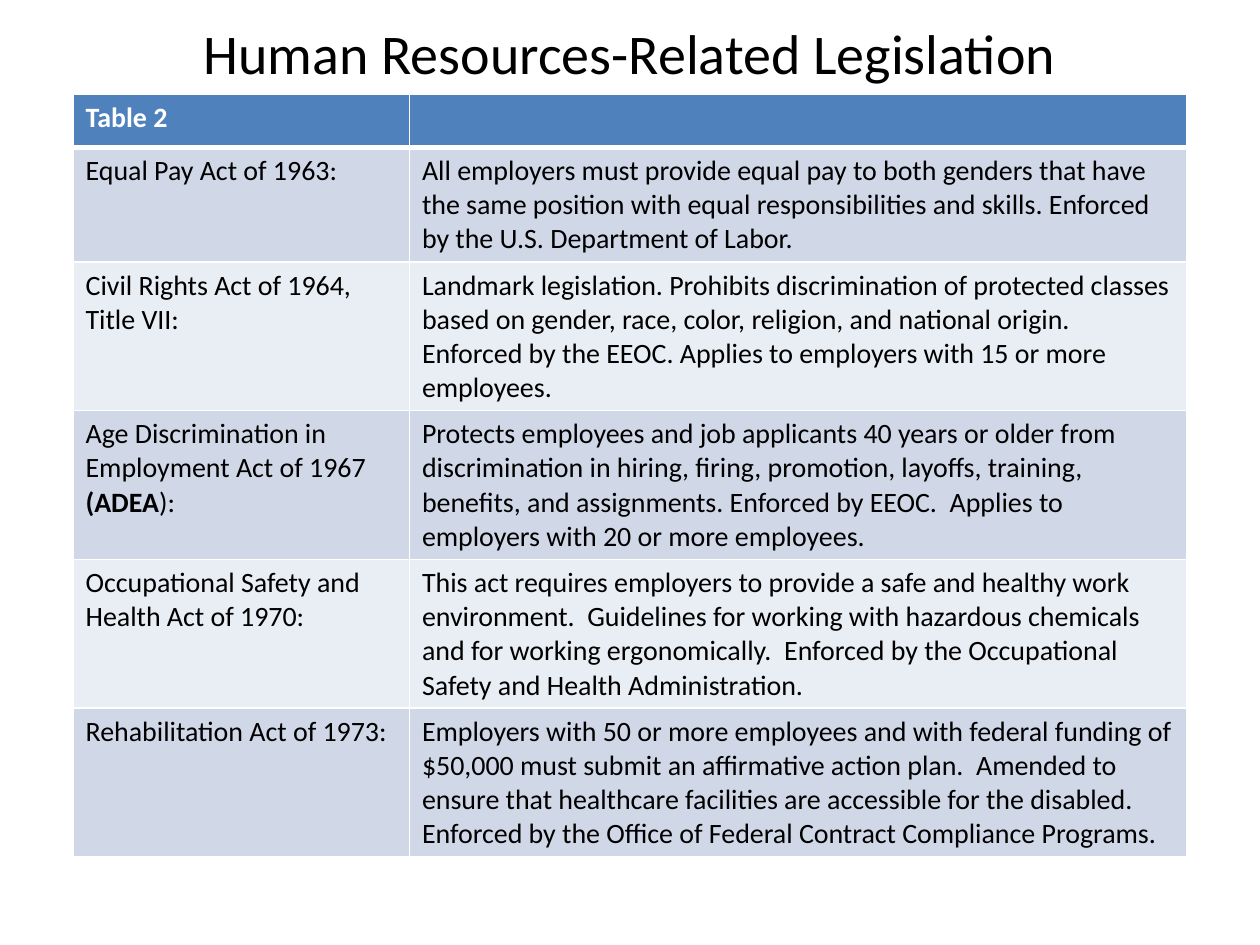
from typing import NamedTuple

from lxml.etree import SubElement
from pptx import Presentation
from pptx.dml.color import RGBColor
from pptx.enum.text import MSO_ANCHOR, PP_ALIGN
from pptx.oxml.ns import qn
from pptx.util import Inches, Pt

FONT = "Calibri"
COLORS = {
    "text": "000000",
    "white": "FFFFFF",
    "header": "4F81BD",
    "band_dark": "D0D8E8",
    "band_light": "E9EDF4",
}


class Run(NamedTuple):
    text: str
    bold: bool = False


class Act(NamedTuple):
    name: list[Run]
    summary: str
    height: float


ACTS = [
    Act([Run("Equal Pay Act of 1963:")],
        "All employers must provide equal pay to both genders that have the same "
        "position with equal responsibilities and skills. Enforced by the U.S. "
        "Department of Labor.", 0.91),
    Act([Run("Civil Rights Act of 1964, Title VII:")],
        "Landmark legislation. Prohibits discrimination of protected classes based "
        "on gender, race, color, religion, and national origin. Enforced by the "
        "EEOC. Applies to employers with 15 or more employees.", 1.18),
    Act([Run("Age Discrimination in Employment Act of 1967 "), Run("(ADEA", True),
         Run("):")],
        "Protects employees and job applicants 40 years or older from discrimination "
        "in hiring, firing, promotion, layoffs, training, benefits, and assignments. "
        "Enforced by EEOC.  Applies to employers with 20 or more employees.", 1.18),
    Act([Run("Occupational Safety and Health Act of 1970:")],
        "This act requires employers to provide a safe and healthy work environment.  "
        "Guidelines for working with hazardous chemicals and for working "
        "ergonomically.  Enforced by the Occupational Safety and Health "
        "Administration.", 1.18),
    Act([Run("Rehabilitation Act of 1973:")],
        "Employers with 50 or more employees and with federal funding of $50,000 must "
        "submit an affirmative action plan.  Amended to ensure that healthcare "
        "facilities are accessible for the disabled.  Enforced by the Office of "
        "Federal Contract Compliance Programs.", 1.18),
]
HEADER_HEIGHT = 0.42
COLUMN_WIDTHS = [2.67, 6.17]


def add_runs(p, runs: list[Run], size: int, color: str) -> None:
    p.font.size = Pt(size)
    p.font.name = FONT
    for run in runs:
        r = p.add_run()
        r.text = run.text
        r.font.name = FONT
        r.font.size = Pt(size)
        r.font.bold = run.bold
        r.font.color.rgb = RGBColor.from_string(COLORS[color])


def set_borders(cell, bottom: float, top: float) -> None:
    """Give the cell white borders, one point wide at the sides."""
    tc_pr = cell._tc.get_or_add_tcPr()
    widths = {"a:lnL": 1, "a:lnR": 1, "a:lnT": top, "a:lnB": bottom}
    for i, (tag, width) in enumerate(widths.items()):
        ln = SubElement(tc_pr, qn(tag), w=str(Pt(width)))
        fill = SubElement(ln, qn("a:solidFill"))
        SubElement(fill, qn("a:srgbClr"), val=COLORS["white"])
        tc_pr.insert(i, ln)  # borders come before the fill


def fill_cell(cell, runs: list[Run], fill: str, color: str = "text",
              bottom: float = 1, top: float = 1) -> None:
    cell.fill.solid()
    cell.fill.fore_color.rgb = RGBColor.from_string(COLORS[fill])
    set_borders(cell, bottom, top)
    add_runs(cell.text_frame.paragraphs[0], runs, 16, color)


def add_title(s, text: str) -> None:
    sp = s.shapes.add_textbox(Inches(0.5), Inches(0.08), Inches(9), Inches(0.67))
    tf = sp.text_frame
    tf.word_wrap = True
    tf.vertical_anchor = MSO_ANCHOR.MIDDLE
    p = tf.paragraphs[0]
    p.alignment = PP_ALIGN.CENTER
    add_runs(p, [Run(text)], 32, "text")


def add_acts_table(s, acts: list[Act]) -> None:
    heights = [HEADER_HEIGHT] + [act.height for act in acts]
    table = s.shapes.add_table(
        len(heights), len(COLUMN_WIDTHS), Inches(0.58), Inches(0.75),
        Inches(sum(COLUMN_WIDTHS)), Inches(sum(heights))).table
    table.first_row = table.horz_banding = False
    for column, width in zip(table.columns, COLUMN_WIDTHS):
        column.width = Inches(width)
    for row, height in zip(table.rows, heights):
        row.height = Inches(height)

    for col, runs in enumerate([[Run("Table 2", True)], []]):
        fill_cell(table.cell(0, col), runs, "header", "white", bottom=3)
    for i, act in enumerate(acts, start=1):
        band = "band_dark" if i % 2 else "band_light"
        for col, runs in enumerate([act.name, [Run(act.summary)]]):
            fill_cell(table.cell(i, col), runs, band, top=3 if i == 1 else 1)


def main() -> None:
    prs = Presentation()
    prs.slide_width, prs.slide_height = Inches(10), Inches(7.5)
    s = prs.slides.add_slide(prs.slide_layouts[6])
    add_title(s, "Human Resources-Related Legislation")
    add_acts_table(s, ACTS)
    prs.save("out.pptx")


if __name__ == "__main__":
    main()
